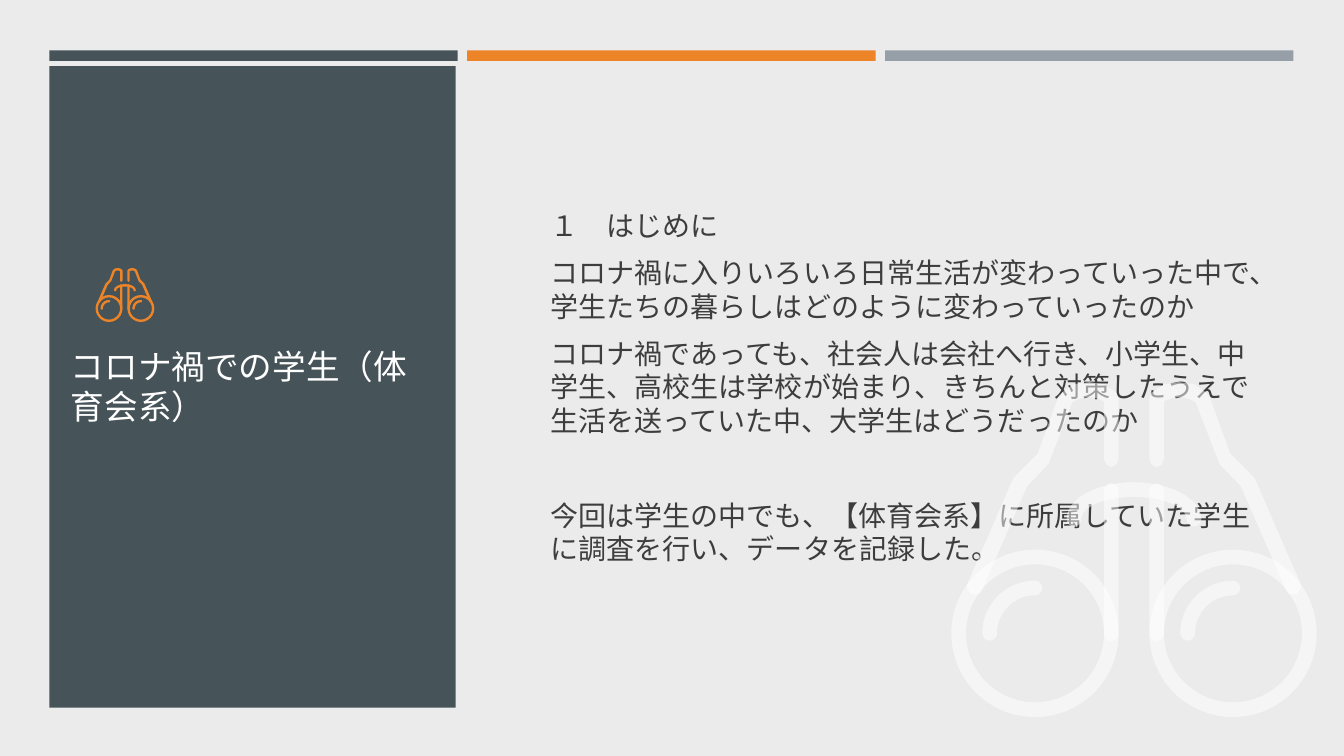
from dataclasses import dataclass
from math import atan2, cos, pi, sin

from lxml.etree import SubElement
from pptx import Presentation
from pptx.dml.color import RGBColor
from pptx.enum.shapes import MSO_SHAPE as SHAPE
from pptx.enum.text import MSO_ANCHOR as ANCHOR, MSO_AUTO_SIZE as AUTO, PP_ALIGN as ALIGN
from pptx.oxml.ns import qn
from pptx.util import Emu, Pt

EMU_PER_PX = 9525
FONT = "Noto Sans CJK JP"
COLORS = {
    "back": "EBEBEB",
    "slate": "465359",
    "orange": "ED8428",
    "grey": "969FA7",
    "text": "3D3D3D",
    "white": "FFFFFF",
}
Point = tuple[float, float]

ICON_W = 347
LENS = 159
LENS_TOP = 161
BAND = 14
SHOULDER: list[Point] = [
    (23, 204), (19, 203), (15, 198), (15, 194), (59, 93), (61, 91), (82, 70),
    (102, 15), (105, 12), (116, 4), (131, 2), (145, 4), (157, 12), (159, 17),
    (159, 75), (157, 80), (152, 83), (147, 80), (145, 75), (145, 20),
    (137, 17), (130, 16), (121, 18), (115, 21), (93, 78), (92, 80),
    (72, 101), (29, 200), (27, 203),
]


@dataclass
class Box:
    left: int
    top: int
    width: int
    height: int
    color: str


@dataclass
class Icon:
    left: int
    top: int
    width: int
    color: str
    alpha: int = 100


@dataclass
class Para:
    text: str
    before: int = 4


BARS = [Box(47 + 398 * i, 48, 389, 10, c) for i, c in enumerate(("slate", "orange", "grey"))]
PANEL = Box(47, 63, 387, 611, "slate")
ICONS = [Icon(906, 362, 348, "white", 50), Icon(91, 255, 56, "orange")]
TITLE = "コロナ禍での学生（体育会系）"
BODY = [
    Para("１　はじめに", 0),
    Para("コロナ禍に入りいろいろ日常生活が変わっていった中で、学生たちの暮らしはどのように変わっていったのか"),
    Para("コロナ禍であっても、社会人は会社へ行き、小学生、中学生、高校生は学校が始まり、きちんと対策したうえで生活を送っていた中、大学生はどうだったのか"),
    Para("今回は学生の中でも、【体育会系】に所属していた学生に調査を行い、データを記録した。", 38),
]


def px(n: float) -> Emu:
    return Emu(round(n * EMU_PER_PX))


def paint(sp, color: str, alpha: int = 100) -> None:
    sp.shadow.inherit = False
    sp.fill.solid()
    sp.fill.fore_color.rgb = RGBColor.from_string(COLORS[color])
    sp.line.fill.background()
    if alpha < 100:
        clr = sp.fill._xPr.find(qn("a:solidFill")).find(qn("a:srgbClr"))
        SubElement(clr, qn("a:alpha")).set("val", str(alpha * 1000))


def add_box(shapes, box: Box) -> None:
    sp = shapes.add_shape(SHAPE.RECTANGLE, px(box.left), px(box.top), px(box.width), px(box.height))
    paint(sp, box.color)


def mirror(points: list[Point]) -> list[Point]:
    return [(ICON_W - x, y) for x, y in points]


def arc(cx: float, cy: float, rx: float, ry: float, start: float, end: float, steps: int = 24) -> list[Point]:
    angles = [start + (end - start) * i / steps for i in range(steps + 1)]
    return [(cx + rx * cos(a), cy + ry * sin(a)) for a in angles]


def curved_band(cx: float, cy: float, rx: float, ry: float, start: float, end: float) -> list[Point]:
    r = BAND / 2
    outer = arc(cx, cy, rx + r, ry + r, start, end)
    inner = arc(cx, cy, rx - r, ry - r, end, start)

    def cap(a: Point, b: Point) -> list[Point]:
        turn = atan2(a[1] - b[1], a[0] - b[0])
        return arc((a[0] + b[0]) / 2, (a[1] + b[1]) / 2, r, r, turn, turn + pi, 8)

    return outer + cap(outer[-1], inner[0]) + inner + cap(inner[-1], outer[0])


def add_icon(shapes, icon: Icon) -> None:
    group = shapes.add_group_shape().shapes
    scale = icon.width / ICON_W

    def preset(kind, x: float, y: float, w: float, h: float, adj: float) -> None:
        sp = group.add_shape(kind, px(icon.left + x * scale), px(icon.top + y * scale),
                             px(w * scale), px(h * scale))
        sp.adjustments[0] = adj
        paint(sp, icon.color, icon.alpha)

    def outline(points: list[Point]) -> None:
        pts = [(px(icon.left + x * scale), px(icon.top + y * scale)) for x, y in points]
        fb = group.build_freeform(*pts[0])
        fb.add_line_segments(pts[1:], close=True)
        paint(fb.convert_to_shape(), icon.color, icon.alpha)

    for lens_x in (0, ICON_W - LENS):
        preset(SHAPE.DONUT, lens_x, LENS_TOP, LENS, LENS, BAND / LENS)
        center = lens_x + LENS / 2
        outline(curved_band(center, LENS_TOP + LENS / 2, 43, 43, pi, 1.5 * pi))
    for points in (SHOULDER, mirror(SHOULDER)):
        outline(points)
    outline(curved_band(ICON_W / 2, 132, 57, 28, pi, 2 * pi))
    for post_x in (LENS - BAND, ICON_W - LENS):
        preset(SHAPE.ROUNDED_RECTANGLE, post_x, 98, BAND, 150, 0.5)


def write(p, text: str, size: int, color: str, spacing: float) -> None:
    p.alignment = ALIGN.LEFT
    p.line_spacing = Pt(spacing)
    r = p.add_run()
    r.text = text
    r.font.size = Pt(size)
    r.font.name = FONT
    r.font.color.rgb = RGBColor.from_string(COLORS[color])
    SubElement(r._r.get_or_add_rPr(), qn("a:ea")).set("typeface", FONT)


def setup_frame(sp):
    tf = sp.text_frame
    tf.word_wrap = True
    tf.auto_size = AUTO.NONE
    tf.vertical_anchor = ANCHOR.MIDDLE
    return tf


def add_title(s) -> None:
    sp = s.shapes.title
    sp.left, sp.top, sp.width, sp.height = px(58), px(278), px(370), px(180)
    sp._element.getparent().append(sp._element)
    write(setup_frame(sp).paragraphs[0], TITLE, 24, "white", 28.6)


def add_body(s) -> None:
    tf = setup_frame(s.shapes.add_textbox(px(515), px(124), px(698), px(489)))
    for i, para in enumerate(BODY):
        p = tf.add_paragraph() if i else tf.paragraphs[0]
        p.space_before = Pt(para.before)
        p.space_after = Pt(6)
        write(p, para.text, 20, "text", 23.8)


def main() -> None:
    prs = Presentation()
    prs.slide_width, prs.slide_height = px(1280), px(720)
    s = prs.slides.add_slide(prs.slide_layouts[5])
    s.background.fill.solid()
    s.background.fill.fore_color.rgb = RGBColor.from_string(COLORS["back"])
    for box in [*BARS, PANEL]:
        add_box(s.shapes, box)
    add_body(s)
    add_title(s)
    for icon in ICONS:
        add_icon(s.shapes, icon)
    prs.save("out.pptx")


if __name__ == "__main__":
    main()
